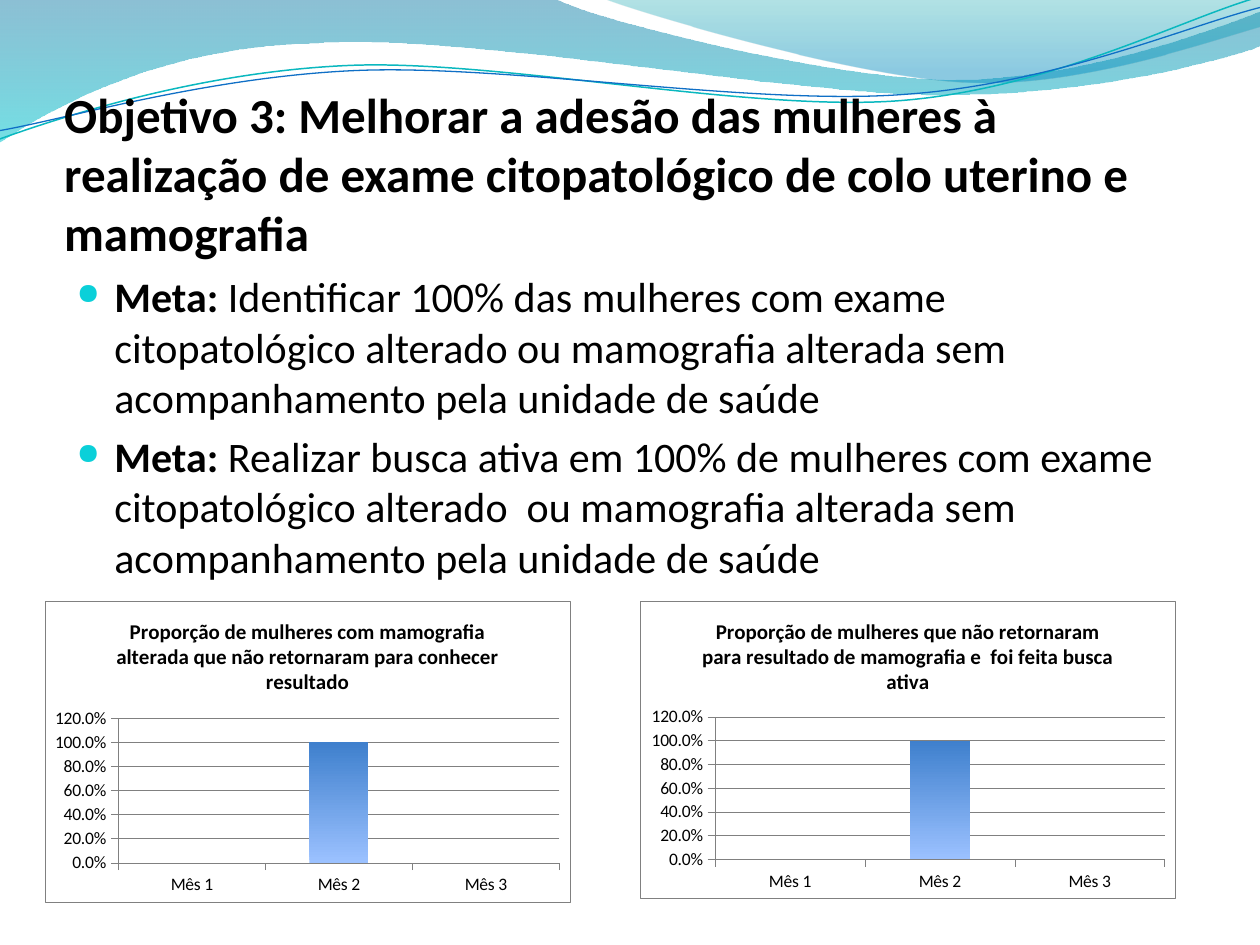
from math import cos, radians, sin

from lxml.etree import SubElement
from pptx import Presentation
from pptx.chart.data import CategoryChartData
from pptx.dml.color import RGBColor
from pptx.enum.chart import XL_CHART_TYPE, XL_TICK_MARK
from pptx.enum.text import MSO_ANCHOR
from pptx.oxml import parse_xml
from pptx.oxml.ns import nsdecls, qn
from pptx.util import Emu, Inches, Pt

COLUMN_CHART = XL_CHART_TYPE.COLUMN_CLUSTERED
TICK_OUTSIDE = XL_TICK_MARK.OUTSIDE
TOP, BOTTOM = MSO_ANCHOR.TOP, MSO_ANCHOR.BOTTOM

BLACK = RGBColor(0x00, 0x00, 0x00)
WHITE = RGBColor(0xFF, 0xFF, 0xFF)
GRAY = RGBColor(0x80, 0x80, 0x80)
BULLET_CYAN = RGBColor(0x0B, 0xD0, 0xD9)
LINE_TEAL = RGBColor(0x0A, 0xB8, 0xBF)
LINE_BLUE = RGBColor(0x0F, 0x6F, 0xC6)
WAVE_BLUE = RGBColor(0x00, 0x74, 0xA1)
WAVE_CYAN = RGBColor(0x00, 0xC6, 0xCF)
CREST_TEAL = RGBColor(0x00, 0xA1, 0xA9)
CREST_BLUE = RGBColor(0x00, 0x8B, 0xBF)
BAR_LIGHT = RGBColor(0x9B, 0xC1, 0xFF)
BAR_DARK = RGBColor(0x3F, 0x80, 0xCD)

FONT = "Calibri"
COLUMNS, ROWS = 100, 75
TILT = -2.7
UPWARD, DOWNWARD = 90, 270
PLOT_SHARES = {"x": 0.14, "y": 0.39, "w": 0.84, "h": 0.48}

WAVE = [(0, 0), (44, -0.1), (47.6, 1.7, 66.4, 6.3, 75.8, 6.3),
        (85.3, 6.3, 95.8, 2.6, 100, 0.9), (100.1, 3.6),
        (98.3, 4.4, 87, 7.6, 74.6, 7.5), (62.2, 7.5, 38.2, 2.8, 25.7, 3.4),
        (12.9, 3.6, 4.6, 8.3, -0.1, 11.3), (0, 0)]
CREST = [(47.9, -0.1), (50.9, 1.1, 68.2, 6.2, 76.9, 6.5),
         (85.6, 6.9, 96.1, 3.2, 100, 2.1), (100, 0), (47.9, -0.1)]
TEAL_STRAND = [(-0.2, 11.1), (4.8, 9.3, 15.8, 5.7, 27.7, 5.2),
               (39.5, 4.7, 59.3, 8.9, 71.3, 8), (83.3, 7.1, 93.8, 1.5, 99.8, -0.2)]
BLUE_STRAND = [(-0.2, 10.4), (4.7, 9.6, 16.4, 6.1, 28.3, 5.6),
               (40.3, 5.1, 59.7, 8.4, 71.7, 7.5), (83.6, 6.7, 94.1, 2.1, 100, 0.6)]

TITLE = ("Objetivo 3: Melhorar a adesão das mulheres à realização de exame "
         "citopatológico de colo uterino e mamografia")
GOALS = [
    ("Identificar 100% das mulheres com exame citopatológico alterado ou "
     "mamografia alterada sem acompanhamento pela unidade de saúde"),
    ("Realizar busca ativa em 100% de mulheres com exame citopatológico alterado  ou "
     "mamografia alterada sem acompanhamento pela unidade de saúde"),
]
MONTHS = ["Mês 1", "Mês 2", "Mês 3"]
NOT_RETURNED = ("Proporção de mulheres com mamografia alterada que não "
                "retornaram para conhecer resultado")
ACTIVE_SEARCH = ("Proporção de mulheres que não retornaram para resultado de "
                 "mamografia e  foi feita busca ativa")


def style_font(font, size, bold=False, color=BLACK):
    font.name, font.size, font.bold = FONT, Pt(size), bold
    font.color.rgb = color


def write(paragraph, text, **style):
    run = paragraph.add_run()
    run.text = text
    style_font(run.font, **style)


def turn(point, center, degrees):
    angle = radians(degrees)
    dx, dy = point[0] - center[0], point[1] - center[1]
    return (center[0] + dx * cos(angle) - dy * sin(angle),
            center[1] + dx * sin(angle) + dy * cos(angle))


def bend(shape, path):
    vertices = iter(list(shape._element.iter(qn("a:lnTo"))))
    for segment in path[1:]:
        vertex = next(vertices)
        if len(segment) == 6:
            vertex.tag = qn("a:cubicBezTo")
            for control in (next(vertices), next(vertices)):
                vertex.append(control[0])
                control.getparent().remove(control)


def paint_gradient(fill, element, stops, angle):
    fill.gradient()
    fill.gradient_angle = angle
    marks = element.iter(qn("a:gs"))
    for stop, mark, (position, color, opacity) in zip(fill.gradient_stops, marks, stops):
        stop.color.rgb = color
        mark.set("pos", str(position * 1000))
        if opacity < 100:
            SubElement(mark[0], qn("a:alpha"), val=str(opacity * 1000))


def panel(border=""):
    return parse_xml(f'<c:spPr {nsdecls("c", "a")}><a:solidFill><a:srgbClr val="{WHITE}"/>'
                     f'</a:solidFill>{border}</c:spPr>')


class Deck:
    def __init__(self):
        self.presentation = Presentation()
        self.presentation.slide_width = Inches(10)
        self.presentation.slide_height = Inches(7.5)
        self.column = self.presentation.slide_width / COLUMNS
        self.row = self.presentation.slide_height / ROWS
        self.slide = self.presentation.slides.add_slide(self.presentation.slide_layouts[6])

    def place(self, left, top, width, height):
        return (Emu(round(left * self.column)), Emu(round(top * self.row)),
                Emu(round(width * self.column)), Emu(round(height * self.row)))

    def outline(self, path, closed, center=(0, 0), tilt=0):
        points = [turn(segment[i:i + 2], center, -tilt)
                  for segment in path for i in range(0, len(segment), 2)]
        points = [(x * self.column, y * self.row) for x, y in points]
        builder = self.slide.shapes.build_freeform(*points[0])
        builder.add_line_segments(points[1:], close=closed)
        shape = builder.convert_to_shape()
        bend(shape, path)
        shape.rotation = tilt
        shape.shadow.inherit = False
        return shape

    def ribbon(self, path, stops):
        shape = self.outline(path, True)
        paint_gradient(shape.fill, shape._element, stops, DOWNWARD)
        shape.line.fill.background()

    def strand(self, path, center, color, width):
        shape = self.outline(path, False, center, TILT)
        shape.fill.background()
        shape.line.color.rgb = color
        shape.line.width = Pt(width)

    def text(self, box, anchor=TOP):
        frame = self.slide.shapes.add_textbox(*self.place(*box)).text_frame
        frame.word_wrap = True
        frame.vertical_anchor = anchor
        return frame

    def title(self, box, text):
        frame = self.text(box, BOTTOM)
        frame.margin_left = frame.margin_right = frame.margin_bottom = 0
        write(frame.paragraphs[0], text, size=28, bold=True)

    def bullets(self, box, label, items):
        frame = self.text(box)
        for index, item in enumerate(items):
            paragraph = frame.add_paragraph() if index else frame.paragraphs[0]
            paragraph.space_before = Pt(4.8)
            properties = paragraph._p.get_or_add_pPr()
            properties.set("marL", str(Inches(0.3)))
            properties.set("indent", str(-Inches(0.3)))
            bullet_color = SubElement(properties, qn("a:buClr"))
            SubElement(bullet_color, qn("a:srgbClr"), val=str(BULLET_CYAN))
            SubElement(properties, qn("a:buSzPct"), val="70000")
            SubElement(properties, qn("a:buChar"), char="●")
            write(paragraph, label, size=24, bold=True)
            write(paragraph, " " + item, size=24)

    def columns(self, box, title, series_name, values):
        data = CategoryChartData(number_format="0.0%")
        data.categories = MONTHS
        data.add_series(series_name, values)
        chart = self.slide.shapes.add_chart(COLUMN_CHART, *self.place(*box), data).chart
        style_font(chart.font, 10)
        chart.has_legend = False
        chart.has_title = True
        write(chart.chart_title.text_frame.paragraphs[0], title, size=12, bold=True)
        chart.chart_title.include_in_layout = False

        plot = chart.plots[0]
        plot.gap_width = 150
        plot.vary_by_categories = False
        bars = plot.series[0]
        bars.invert_if_negative = False
        paint_gradient(bars.format.fill, bars._element,
                       [(0, BAR_LIGHT, 100), (100, BAR_DARK, 100)], UPWARD)

        scale = chart.value_axis
        scale.minimum_scale, scale.maximum_scale, scale.major_unit = 0, 1.2, 0.2
        scale.tick_labels.number_format = "0.0%"
        scale.tick_labels.number_format_is_linked = False
        for axis in (scale, chart.category_axis):
            axis.major_tick_mark = TICK_OUTSIDE
            style_font(axis.tick_labels.font, 10)
        for line in (scale.format.line, chart.category_axis.format.line,
                     scale.major_gridlines.format.line):
            line.color.rgb = GRAY
            line.width = Pt(0.25)
        self.frame_chart(chart)

    def frame_chart(self, chart):
        border = (f'<a:ln w="{Pt(0.25)}"><a:solidFill><a:srgbClr val="{GRAY}"/>'
                  '</a:solidFill></a:ln>')
        body = chart._chartSpace.find(qn("c:chart"))
        body.addnext(panel(border))
        area = body.find(qn("c:plotArea"))
        for layout in area.findall(qn("c:layout")):
            area.remove(layout)
        shares = "".join(f'<c:{key} val="{share}"/>' for key, share in PLOT_SHARES.items())
        area.insert(0, parse_xml(
            f'<c:layout {nsdecls("c")}><c:manualLayout><c:layoutTarget val="inner"/>'
            f'<c:xMode val="edge"/><c:yMode val="edge"/>{shares}</c:manualLayout></c:layout>'))
        area.append(panel())


def main():
    deck = Deck()
    deck.ribbon(WAVE, [(0, WAVE_BLUE, 45), (100, WAVE_CYAN, 55)])
    deck.ribbon(CREST, [(0, CREST_TEAL, 30), (80, CREST_BLUE, 45)])
    deck.strand(TEAL_STRAND, (49.9, 5.75), LINE_TEAL, 0.85)
    deck.strand(BLUE_STRAND, (49.95, 5.9), LINE_BLUE, 0.75)
    deck.title((5.1, 2.9, 90, 17.8), TITLE)
    deck.bullets((5.1, 21, 90, 49.5), "Meta:", GOALS)
    deck.columns((3.55, 47.7, 41.7, 23.9), NOT_RETURNED, NOT_RETURNED, (0, 1, 0))
    deck.columns((50.8, 47.7, 42.5, 23.6), ACTIVE_SEARCH, "Series 1", (0, 1, 0))
    deck.presentation.save("out.pptx")


if __name__ == "__main__":
    main()
